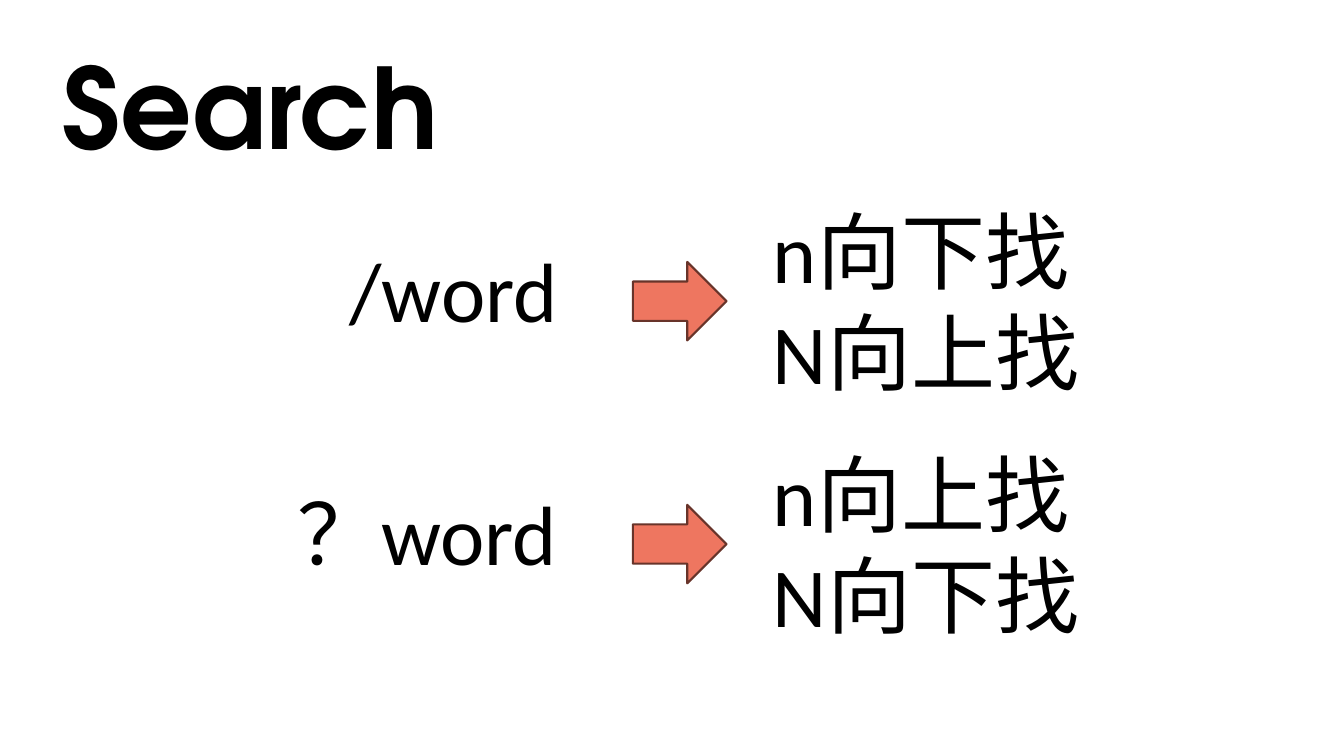
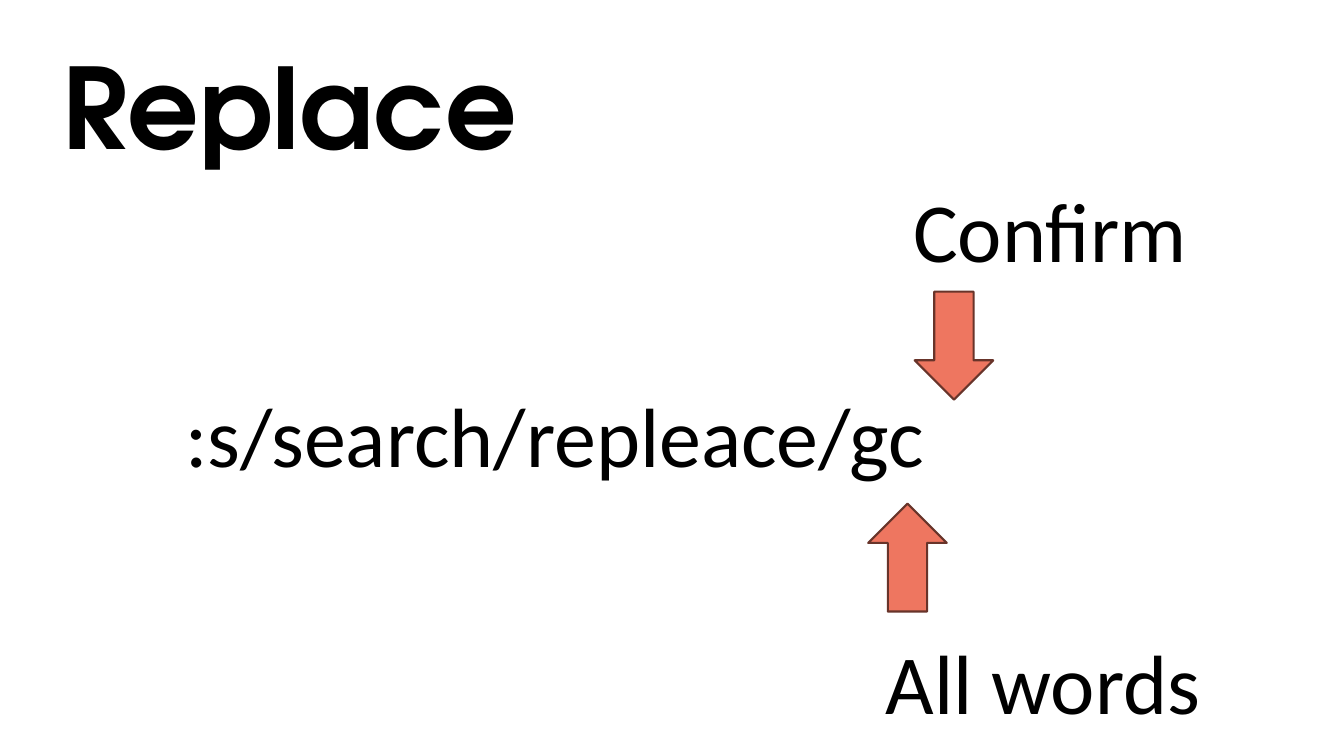
from pptx import Presentation
from pptx.dml.color import RGBColor
from pptx.enum import shapes, text
from pptx.util import Cm, Pt

# Content; lengths in centimetres
SEARCHES = [
    # query, left edge of query, results
    ("/word", 8.56, ["n向下找", "N向上找"]),
    ("？word", 7.24, ["n向上找", "N向下找"]),
]
COMMAND = ":s/search/repleace/gc"
FLAGS = [
    # label, label left and top, arrow left and top, arrow rotation
    ("All words", 22.07, 15.77, 21.51, 13.06, 270),
    ("Confirm", 22.76, 4.37, 22.68, 7.72, 90),
]

# Shared style
COLORS = {"text": "000000", "arrow": "EE7660", "outline": "68342A"}
TITLE_FONT, TITLE_SIZE = "TeX Gyre Adventor", 80
BODY_FONT, BODY_SIZE = "Calibri", 60
LINE_HEIGHT = 2.82
ARROW_HEIGHT = 1.98

# Search rows
ROW_TOP, ROW_STEP = 4.9, 6.12
QUERY_RIGHT = 15.04


def color(name):
    return RGBColor.from_string(COLORS[name])


def style(para, font_name, size, bold=False):
    font = para.font
    font.name, font.size, font.bold = font_name, Pt(size), bold
    font.color.rgb = color("text")


def add_page(deck, heading):
    page = deck.slides.add_slide(deck.slide_layouts[5])
    title = page.shapes.title
    title.left, title.top = Cm(1.32), Cm(0.81)
    title.width, title.height = Cm(31), Cm(3.68)
    frame = title.text_frame
    frame.text = heading
    frame.auto_size = text.MSO_AUTO_SIZE.NONE
    frame.vertical_anchor = text.MSO_ANCHOR.TOP
    para = frame.paragraphs[0]
    para.alignment = text.PP_ALIGN.LEFT
    style(para, TITLE_FONT, TITLE_SIZE, bold=True)
    return page


def add_text(page, lines, left, top, width, height=LINE_HEIGHT):
    box = page.shapes.add_textbox(Cm(left), Cm(top), Cm(width), Cm(height))
    frame = box.text_frame
    frame.word_wrap = True
    frame.text = "\n".join(lines)
    for para in frame.paragraphs:
        style(para, BODY_FONT, BODY_SIZE)


def add_arrow(page, left, top, width, rotation=0):
    arrow = page.shapes.add_shape(
        shapes.MSO_SHAPE.RIGHT_ARROW,
        Cm(left), Cm(top), Cm(width), Cm(ARROW_HEIGHT))
    arrow.rotation = rotation
    arrow.shadow.inherit = False
    arrow.fill.solid()
    arrow.fill.fore_color.rgb = color("arrow")
    arrow.line.color.rgb = color("outline")
    arrow.line.width = Pt(1.5)


def build_search(deck):
    page = add_page(deck, "Search")
    for row, (query, left, results) in enumerate(SEARCHES):
        top = ROW_TOP + row * ROW_STEP
        add_text(page, [query], left, top + 0.99, QUERY_RIGHT - left)
        add_text(page, results, 19.23, top, 11.25, 5.38)
        add_arrow(page, 15.95, top + 1.7, 2.36)


def build_replace(deck):
    page = add_page(deck, "Replace")
    add_text(page, [COMMAND], 4.42, 9.53, 21.34)
    for label, left, top, arrow_left, arrow_top, rotation in FLAGS:
        add_text(page, [label], left, top, 9.7)
        add_arrow(page, arrow_left, arrow_top, 2.72, rotation)


def main():
    deck = Presentation()
    deck.slide_width, deck.slide_height = Cm(33.87), Cm(19.05)
    build_search(deck)
    build_replace(deck)
    deck.save("out.pptx")


if __name__ == "__main__":
    main()
